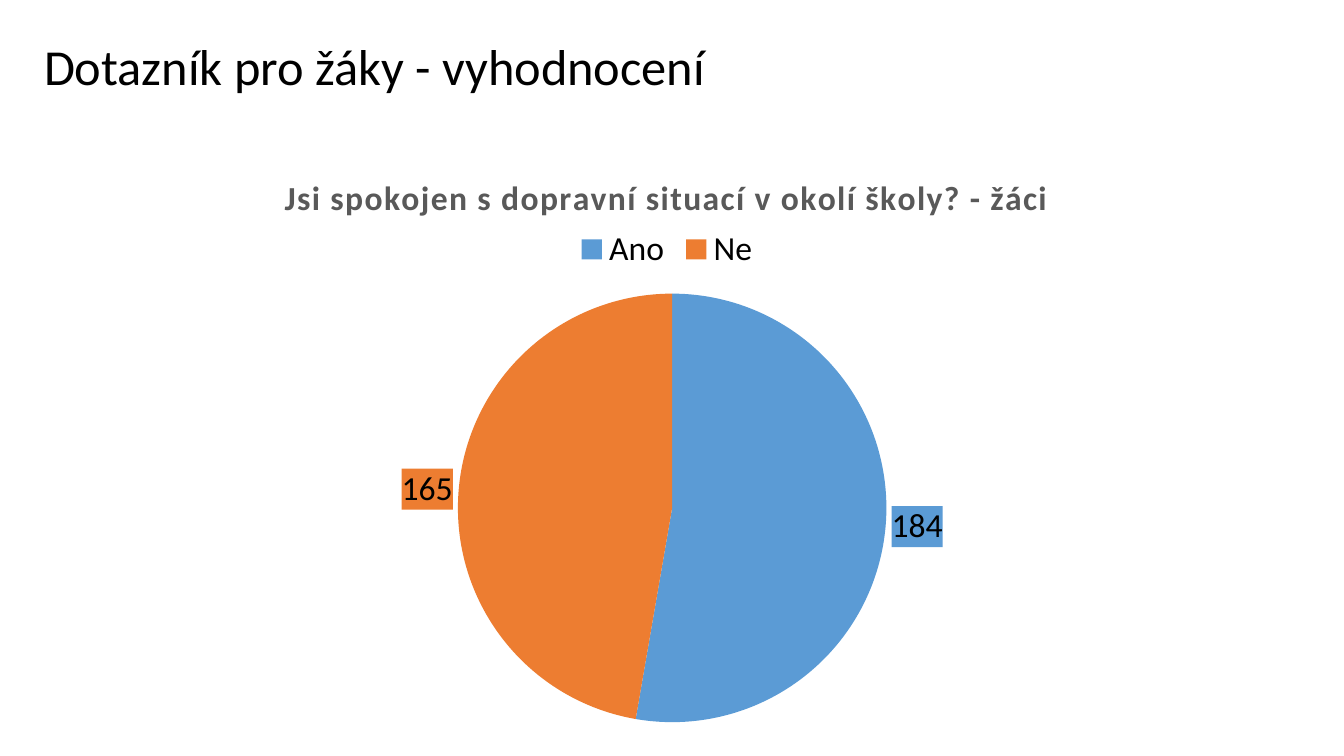
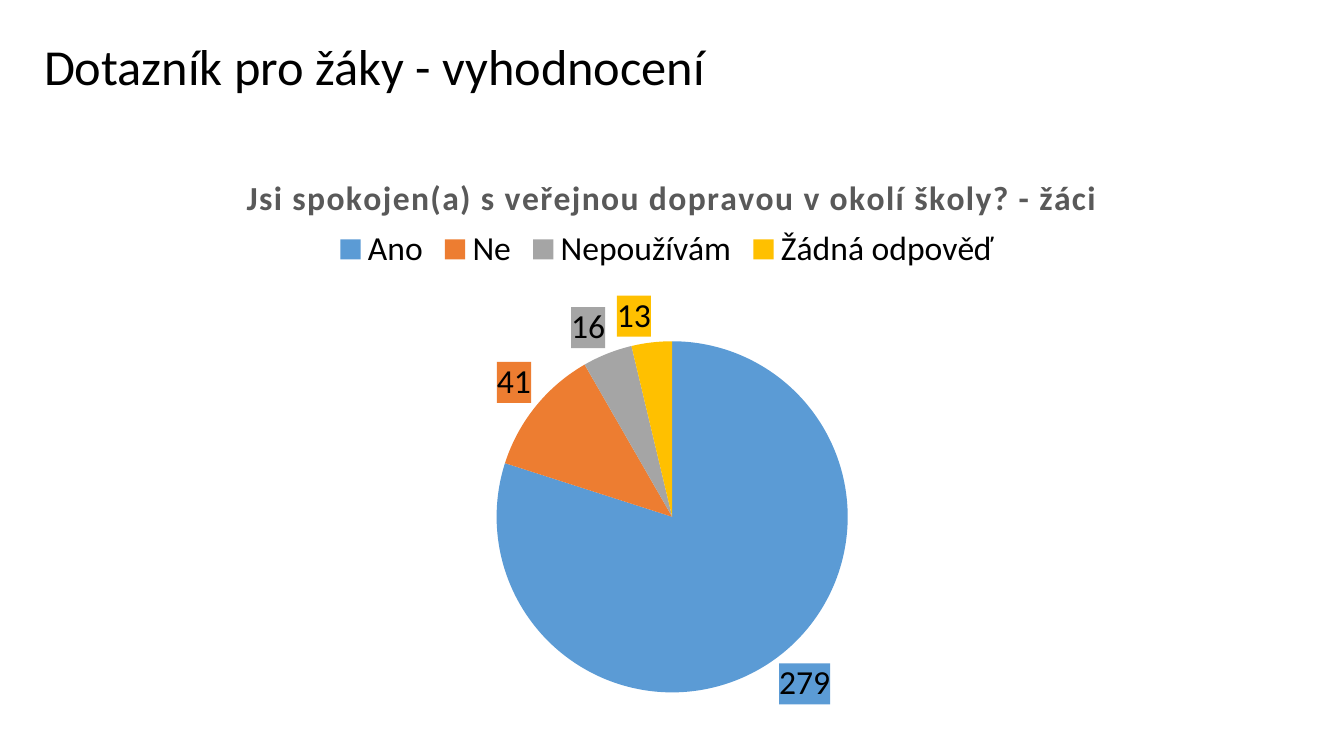
from copy import deepcopy
from lxml.etree import SubElement
from pptx import Presentation
from pptx.chart.data import CategoryChartData
from pptx.dml.color import RGBColor
from pptx.enum.chart import XL_CHART_TYPE, XL_LABEL_POSITION, XL_LEGEND_POSITION
from pptx.enum.text import MSO_ANCHOR
from pptx.oxml.ns import qn
from pptx.util import Cm, Pt

BLACK = RGBColor(0x00, 0x00, 0x00)
GREY = RGBColor(0x59, 0x59, 0x59)
SLICE_COLORS = [
    RGBColor(0x5B, 0x9B, 0xD5),
    RGBColor(0xED, 0x7D, 0x31),
    RGBColor(0xA5, 0xA5, 0xA5),
    RGBColor(0xFF, 0xC0, 0x00),
]
FONT = "Calibri"
HEADING = "Dotazník pro žáky - vyhodnocení"

SURVEYS = [
    {
        "question": "Jsi spokojen s dopravní situací v okolí školy? - žáci",
        "answers": {"Ano": 184, "Ne": 165},
        "title": {"x": 0.19, "y": 0.05},
        "legend": {"x": 0.42, "y": 0.14},
        "pie": {"x": 0.33, "y": 0.26, "w": 0.34, "h": 0.72},
    },
    {
        "question": "Jsi spokojen(a) s veřejnou dopravou v okolí školy? - žáci",
        "answers": {"Ano": 279, "Ne": 41, "Nepoužívám": 16, "Žádná odpověď": 13},
        "title": {"x": 0.16, "y": 0.05},
        "legend": {"x": 0.23, "y": 0.14},
        "pie": {"x": 0.36, "y": 0.34, "w": 0.28, "h": 0.59},
    },
]


def style_font(font, size, color=BLACK, bold=False):
    font.name = FONT
    font.size = Pt(size)
    font.bold = bold
    font.color.rgb = color


def place(element, index, position):
    for old_layout in element.findall(qn("c:layout")):
        element.remove(old_layout)
    layout = element.makeelement(qn("c:layout"))
    element.insert(index, layout)
    manual = SubElement(layout, qn("c:manualLayout"))
    if "w" in position:
        SubElement(manual, qn("c:layoutTarget")).set("val", "inner")
    for axis in ("x", "y"):
        SubElement(manual, qn(f"c:{axis}Mode")).set("val", "edge")
    for key, value in position.items():
        SubElement(manual, qn(f"c:{key}")).set("val", str(value))


deck = Presentation()
deck.slide_width = Cm(33.87)
deck.slide_height = Cm(19.05)

for survey in SURVEYS:
    page = deck.slides.add_slide(deck.slide_layouts[6])

    box = page.shapes.add_textbox(Cm(0.86), Cm(0), Cm(33), Cm(3.5))
    frame = box.text_frame
    frame.word_wrap = True
    frame.vertical_anchor = MSO_ANCHOR.MIDDLE
    para = frame.paragraphs[0]
    para.text = HEADING
    para.line_spacing = 0.9
    style_font(para.font, 36)

    answers = survey["answers"]
    data = CategoryChartData()
    data.categories = list(answers)
    data.add_series("Series 1", list(answers.values()))
    chart = page.shapes.add_chart(
        XL_CHART_TYPE.PIE, Cm(0.94), Cm(3.5), Cm(32), Cm(15), data
    ).chart
    style_font(chart.font, 10)

    chart.has_title = True
    question = chart.chart_title.text_frame.paragraphs[0]
    span = question.add_run()
    span.text = survey["question"]
    style_font(span.font, 24, GREY, True)
    span._r.get_or_add_rPr().set("spc", "100")
    place(chart.chart_title._element, 1, survey["title"])

    chart.has_legend = True
    chart.legend.position = XL_LEGEND_POSITION.TOP
    chart.legend.include_in_layout = False
    style_font(chart.legend.font, 24)
    place(chart.legend._element, 1, survey["legend"])

    plot = chart.plots[0]
    plot.vary_by_categories = True
    place(chart._chartSpace.chart.plotArea, 0, survey["pie"])

    series = plot.series[0]
    labels = series.data_labels
    labels.show_value = True
    labels.position = XL_LABEL_POSITION.OUTSIDE_END
    style_font(labels.font, 24)

    for index, color in enumerate(SLICE_COLORS[:len(answers)]):
        point = series.points[index]
        point.format.fill.solid()
        point.format.fill.fore_color.rgb = color
        label = point.data_label
        style_font(label.font, 24)
        label.position = XL_LABEL_POSITION.OUTSIDE_END

    slices = series._element.findall(qn("c:dPt"))
    slice_labels = series._element.findall(f"{qn('c:dLbls')}/{qn('c:dLbl')}")
    for piece, slice_label in zip(slices, slice_labels):
        fill = deepcopy(piece.find(qn("c:spPr")))
        slice_label.find(qn("c:txPr")).addprevious(fill)

deck.save("out.pptx")
